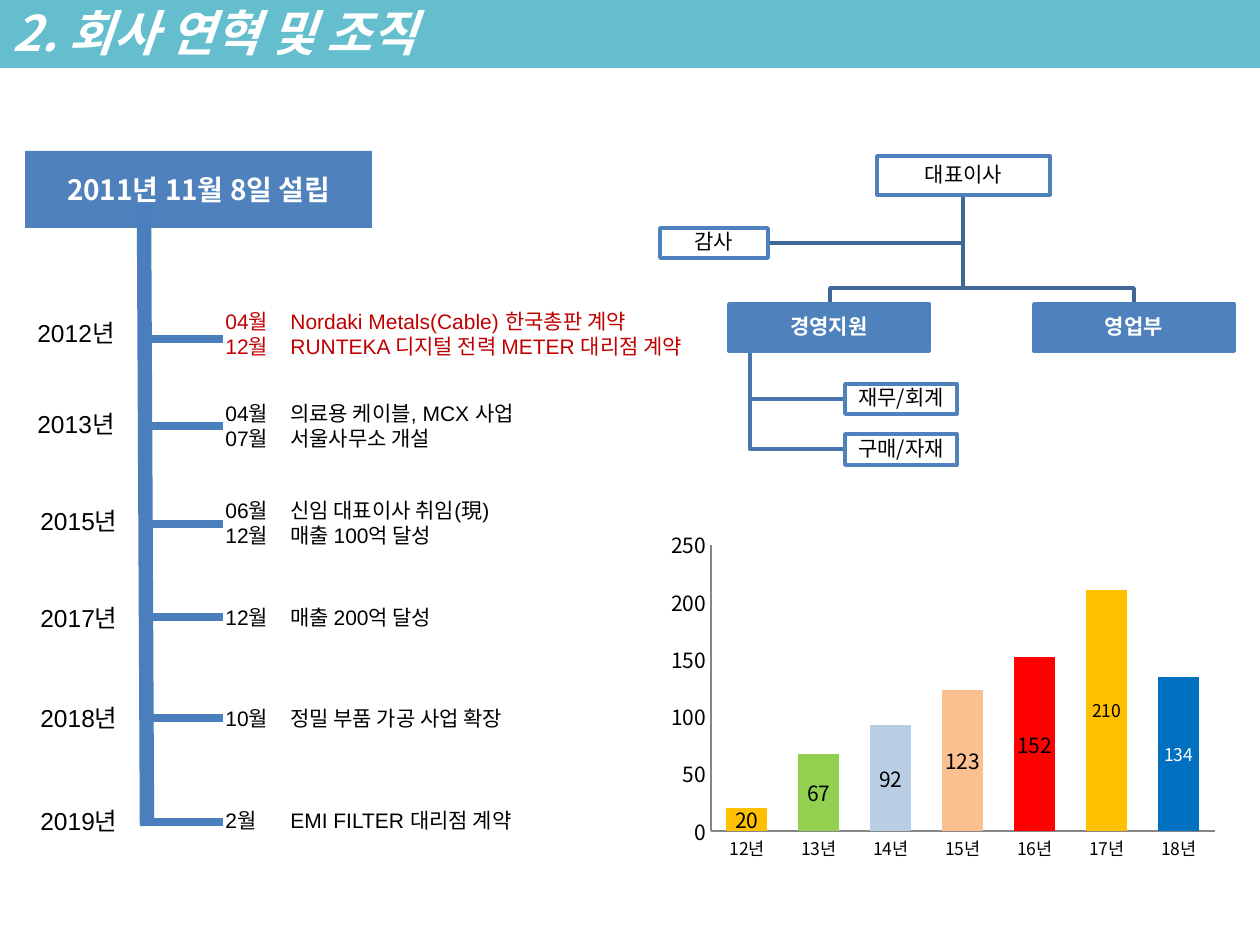
from lxml.etree import SubElement
from pptx import Presentation
from pptx.chart.data import CategoryChartData
from pptx.dml.color import RGBColor
from pptx.enum.chart import XL_CHART_TYPE, XL_LABEL_POSITION, XL_TICK_MARK
from pptx.enum.shapes import MSO_CONNECTOR, MSO_SHAPE
from pptx.enum.text import MSO_ANCHOR, PP_ALIGN
from pptx.oxml import parse_xml
from pptx.oxml.ns import nsdecls, qn
from pptx.util import Pt

TITLE = "2. 회사 연혁 및 조직"
FOUNDED = "2011년 11월 8일 설립"
KOREAN, LATIN = "Noto Sans CJK KR", "Arial"
BLUE, SPINE, BLACK, WHITE, RED = "4F81BD", "4B7EBC", "000000", "FFFFFF", "C00000"

# year, left, label top, branch y, events top, colour, events
HISTORY = [
    ("2012년", 25, 312, 339, 302, RED,
     [("04월", "Nordaki Metals(Cable) 한국총판 계약"),
      ("12월", "RUNTEKA 디지털 전력 METER 대리점 계약")]),
    ("2013년", 25, 403, 426, 394, BLACK,
     [("04월", "의료용 케이블, MCX 사업"), ("07월", "서울사무소 개설")]),
    ("2015년", 28, 500, 524, 491, BLACK,
     [("06월", "신임 대표이사 취임(現)"), ("12월", "매출 100억 달성")]),
    ("2017년", 28, 597, 617, 598, BLACK, [("12월", "매출 200억 달성")]),
    ("2018년", 28, 697, 718, 699, BLACK, [("10월", "정밀 부품 가공 사업 확장")]),
    ("2019년", 28, 800, 822, 801, BLACK, [("2월", "EMI FILTER 대리점 계약")]),
]
ORG_LINES = [
    ("3F6797", [(963, 195), (963, 243), (767, 243)]),
    ("3F6797", [(963, 195), (963, 288), (1134, 288), (1134, 304)]),
    ("3F6797", [(963, 195), (963, 288), (830, 288), (830, 304)]),
    ("4875AC", [(750, 351), (750, 449), (845, 449)]),
    ("4875AC", [(750, 351), (750, 399), (845, 399)]),
]
ORG_BOXES = [
    ("대표이사", 877, 156, 173, 39, False),
    ("경영지원", 729, 304, 200, 47, True),
    ("재무/회계", 845, 384, 112, 30, False),
    ("구매/자재", 845, 434, 112, 31, False),
    ("영업부", 1034, 304, 200, 47, True),
    ("감사", 660, 228, 108, 30, False),
]
SALES = [
    ("12년", 20, "FFC000"), ("13년", 67, "92D050"), ("14년", 92, "B9CDE5"),
    ("15년", 123, "FAC090"), ("16년", 152, "FF0000"), ("17년", 210, "FFC000"),
    ("18년", 134, "0070C0"),
]
SMALL_LABELS = {5: BLACK, 6: WHITE}


def px(value):
    return round(value * 914400 / 126)


def rgb(code):
    return RGBColor.from_string(code)


def add_span(para, text, size, font, color, bold=False, italic=False):
    span = para.add_run()
    span.text = text
    span.font.size, span.font.name = Pt(size), font
    span.font.bold, span.font.italic = bold, italic
    span.font.color.rgb = rgb(color)
    SubElement(span.font._element, qn("a:ea")).set("typeface", KOREAN)


def add_box(page, left, top, width, height, fill=None, line=None):
    box = page.shapes.add_shape(MSO_SHAPE.RECTANGLE, *map(px, (left, top, width, height)))
    box.shadow.inherit = False
    paint(box, fill, line)
    box.text_frame.vertical_anchor = MSO_ANCHOR.MIDDLE
    box.text_frame.paragraphs[0].alignment = PP_ALIGN.CENTER
    return box


def paint(shape, fill, line):
    if fill:
        shape.fill.solid()
        shape.fill.fore_color.rgb = rgb(fill)
    else:
        shape.fill.background()
    if line:
        shape.line.color.rgb = rgb(line)
        shape.line.width = Pt(2)
    else:
        shape.line.fill.background()


def add_line(page, start, end, width):
    line = page.shapes.add_connector(MSO_CONNECTOR.STRAIGHT, *map(px, start + end))
    line.line.color.rgb = rgb(SPINE)
    line.line.width = Pt(width)
    SubElement(line._element.spPr, qn("a:effectLst"))


def add_text(page, left, top, width, height, lines, size, color):
    box = page.shapes.add_textbox(*map(px, (left, top, width, height)))
    frame = box.text_frame
    frame.word_wrap = True
    for index, line in enumerate(lines):
        para = frame.add_paragraph() if index else frame.paragraphs[0]
        if "\t" in line:
            stops = SubElement(para._p.get_or_add_pPr(), qn("a:tabLst"))
            SubElement(stops, qn("a:tab"), pos=str(px(65)), algn="l")
        add_span(para, line, size, LATIN, color)


def add_title(page):
    title = page.shapes.title
    title.left, title.top, title.width, title.height = map(px, (0, -4, 1260, 72))
    paint(title, "64BECD", None)
    title.text_frame.vertical_anchor = MSO_ANCHOR.MIDDLE
    para = title.text_frame.paragraphs[0]
    para.alignment = PP_ALIGN.LEFT
    add_span(para, TITLE, 28, KOREAN, WHITE, True, True)


def add_history(page):
    box = add_box(page, 25, 151, 347, 77, BLUE)
    add_span(box.text_frame.paragraphs[0], FOUNDED, 16, KOREAN, WHITE, True)
    add_line(page, (144, 204), (147, 826), 8.25)
    for year, left, label_top, branch, top, color, events in HISTORY:
        add_line(page, (146, branch), (223, branch), 5)
        add_text(page, left, label_top, 111, 42, [year], 14, BLACK)
        lines = [f"{month}\t{event}" for month, event in events]
        width = 496 if color == RED else 417
        add_text(page, 213, top, width, 13 + 25 * len(lines), lines, 12, color)


def add_organisation(page):
    for color, points in ORG_LINES:
        corners = [(px(x), px(y)) for x, y in points]
        builder = page.shapes.build_freeform(*corners[0])
        builder.add_line_segments(corners[1:], close=False)
        shape = builder.convert_to_shape()
        shape.shadow.inherit = False
        paint(shape, None, color)
    for name, left, top, width, height, filled in ORG_BOXES:
        box = add_box(page, left, top, width, height, BLUE if filled else None, BLUE)
        frame = box.text_frame
        frame.margin_left = frame.margin_right = px(1)
        frame.margin_top = frame.margin_bottom = px(1)
        para = frame.paragraphs[0]
        para.line_spacing = 0.9
        add_span(para, name, 12, KOREAN, WHITE if filled else BLACK, filled)


def add_sales(page):
    data = CategoryChartData()
    data.categories = [year for year, _, _ in SALES]
    data.add_series("Series 1", [value for _, value, _ in SALES])
    chart = page.shapes.add_chart(
        XL_CHART_TYPE.COLUMN_STACKED, *map(px, (660, 524, 566, 345)), data).chart
    chart.has_legend = chart.has_title = False
    chart.font.name, chart.font.size = KOREAN, Pt(18)
    chart.font.color.rgb = rgb(BLACK)
    for axis, size in ((chart.category_axis, 10), (chart.value_axis, 12)):
        axis.has_major_gridlines = False
        axis.major_tick_mark = axis.minor_tick_mark = XL_TICK_MARK.NONE
        axis.tick_labels.font.size = Pt(size)
        axis.format.line.color.rgb = rgb("868686")
    chart.value_axis.minimum_scale, chart.value_axis.maximum_scale = 0, 250
    chart.value_axis.major_unit = 50
    plot = chart.plots[0]
    plot.gap_width, plot.overlap, plot.vary_by_categories = 75, 100, False
    series = plot.series[0]
    labels = series.data_labels
    labels.show_value, labels.position = True, XL_LABEL_POSITION.CENTER
    labels.font.size = Pt(12)
    for index, (_, _, color) in enumerate(SALES):
        fill = series.points[index].format.fill
        fill.solid()
        fill.fore_color.rgb = rgb(color)
    for index, color in SMALL_LABELS.items():
        font = series.points[index].data_label.font
        font.size = Pt(10)
        font.color.rgb = rgb(color)
    area = chart._chartSpace.chart.plotArea
    for old in area.findall(qn("c:layout")):
        area.remove(old)
    area.insert(0, parse_xml(
        f'<c:layout {nsdecls("c")}><c:manualLayout><c:layoutTarget val="inner"/>'
        '<c:xMode val="edge"/><c:yMode val="edge"/><c:x val="0.09"/><c:y val="0.06"/>'
        '<c:w val="0.89"/><c:h val="0.83"/></c:manualLayout></c:layout>'))


def main():
    deck = Presentation()
    deck.slide_width, deck.slide_height = px(1260), px(945)
    page = deck.slides.add_slide(deck.slide_layouts[5])
    add_title(page)
    add_history(page)
    add_organisation(page)
    add_sales(page)
    deck.save("out.pptx")


if __name__ == "__main__":
    main()
